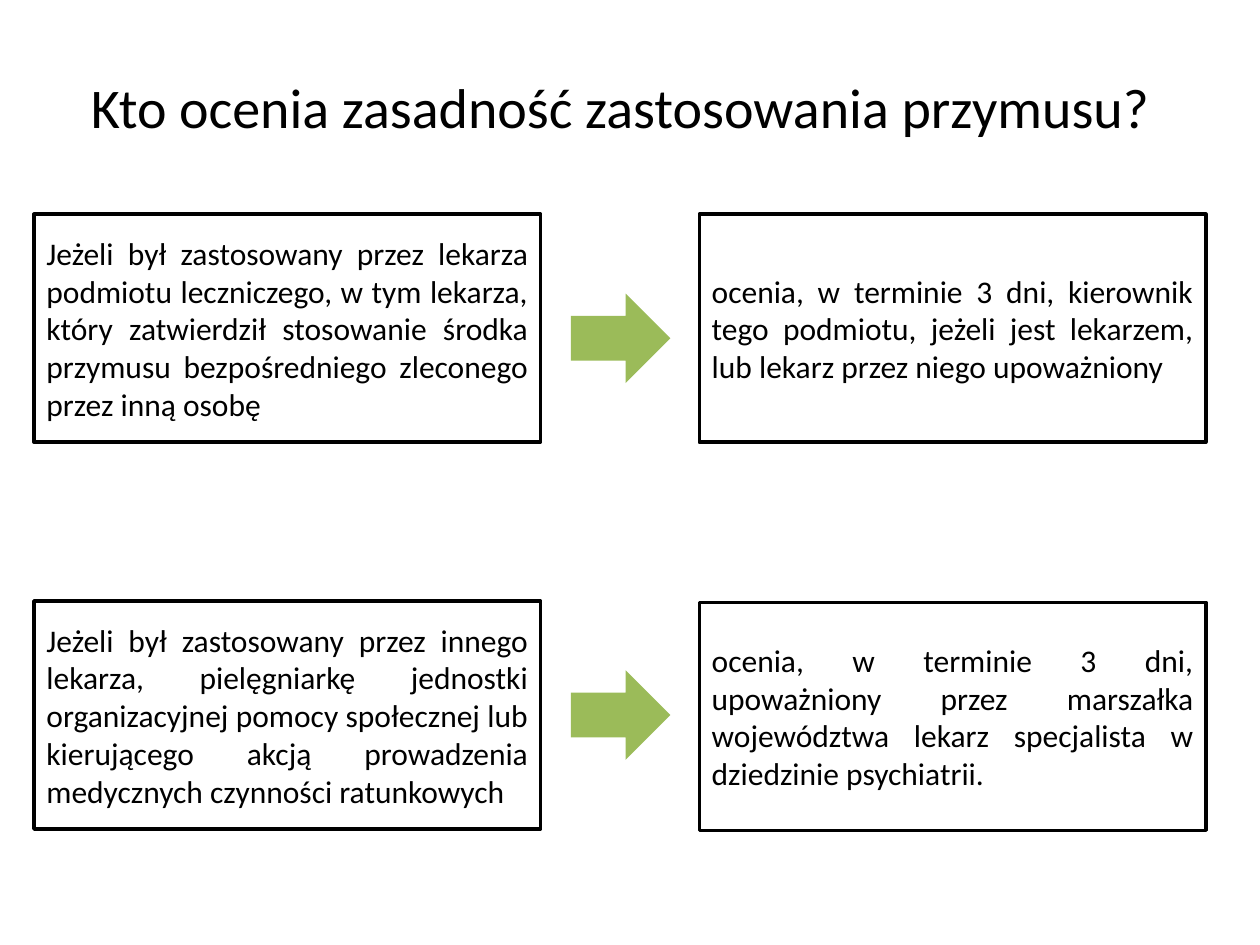
from pptx import Presentation
from pptx.dml.color import RGBColor
from pptx.enum.shapes import MSO_SHAPE
from pptx.enum.text import MSO_ANCHOR, PP_ALIGN
from pptx.util import Inches, Pt

RECTANGLE = MSO_SHAPE.RECTANGLE
RIGHT_ARROW = MSO_SHAPE.RIGHT_ARROW
MIDDLE = MSO_ANCHOR.MIDDLE
CENTER = PP_ALIGN.CENTER
JUSTIFY = PP_ALIGN.JUSTIFY

FONT = "Calibri"
BLACK, WHITE, GREEN = "000000", "FFFFFF", "9BBB59"

CASE_LEFT, ARROW_LEFT, ASSESSOR_LEFT = 0.27, 4.53, 5.55
BOX_SIZE = (4.02, 1.81)
ARROW_SIZE = (0.79, 0.71)

# Top of the case, of the arrow and of the assessor, then the two texts
ROWS = [
    (1.7, 2.33, 1.7,
     "Jeżeli był zastosowany przez lekarza podmiotu leczniczego, w tym lekarza, "
     "który zatwierdził stosowanie środka przymusu bezpośredniego zleconego "
     "przez inną osobę",
     "ocenia, w terminie 3 dni, kierownik tego podmiotu, jeżeli jest lekarzem, "
     "lub lekarz przez niego upoważniony"),
    (4.77, 5.32, 4.78,
     "Jeżeli był zastosowany przez innego lekarza, pielęgniarkę jednostki "
     "organizacyjnej pomocy społecznej lub kierującego akcją prowadzenia "
     "medycznych czynności ratunkowych",
     "ocenia, w terminie 3 dni, upoważniony przez marszałka województwa "
     "lekarz specjalista w dziedzinie psychiatrii."),
]


def color(hex_value):
    return RGBColor.from_string(hex_value)


def write(shape, text, size, alignment):
    frame = shape.text_frame
    frame.word_wrap = True
    frame.vertical_anchor = MIDDLE
    paragraph = frame.paragraphs[0]
    paragraph.text = text
    paragraph.alignment = alignment
    paragraph.font.name = FONT
    paragraph.font.size = Pt(size)
    paragraph.font.color.rgb = color(BLACK)


def add_title(slide, text):
    title = slide.shapes.add_textbox(
        Inches(0.12), Inches(0.61), Inches(9.61), Inches(0.46))
    write(title, text, 32, CENTER)


def add_filled(slide, kind, left, top, size, fill):
    """Add a preset shape with a plain fill and no line or shadow."""
    shape = slide.shapes.add_shape(
        kind, Inches(left), Inches(top), *map(Inches, size))
    shape.shadow.inherit = False
    shape.fill.solid()
    shape.fill.fore_color.rgb = color(fill)
    shape.line.fill.background()
    return shape


def add_box(slide, left, top, text):
    box = add_filled(slide, RECTANGLE, left, top, BOX_SIZE, WHITE)
    box.line.color.rgb = color(BLACK)
    box.line.width = Pt(2)
    write(box, text, 18, JUSTIFY)


def main():
    presentation = Presentation()
    presentation.slide_width = Inches(10)
    presentation.slide_height = Inches(7.5)
    slide = presentation.slides.add_slide(presentation.slide_layouts[6])

    add_title(slide, "Kto ocenia zasadność zastosowania przymusu?")
    for case_top, arrow_top, assessor_top, case, assessor in ROWS:
        add_box(slide, CASE_LEFT, case_top, case)
        add_box(slide, ASSESSOR_LEFT, assessor_top, assessor)
        add_filled(slide, RIGHT_ARROW, ARROW_LEFT, arrow_top, ARROW_SIZE, GREEN)

    presentation.save("out.pptx")


if __name__ == "__main__":
    main()
